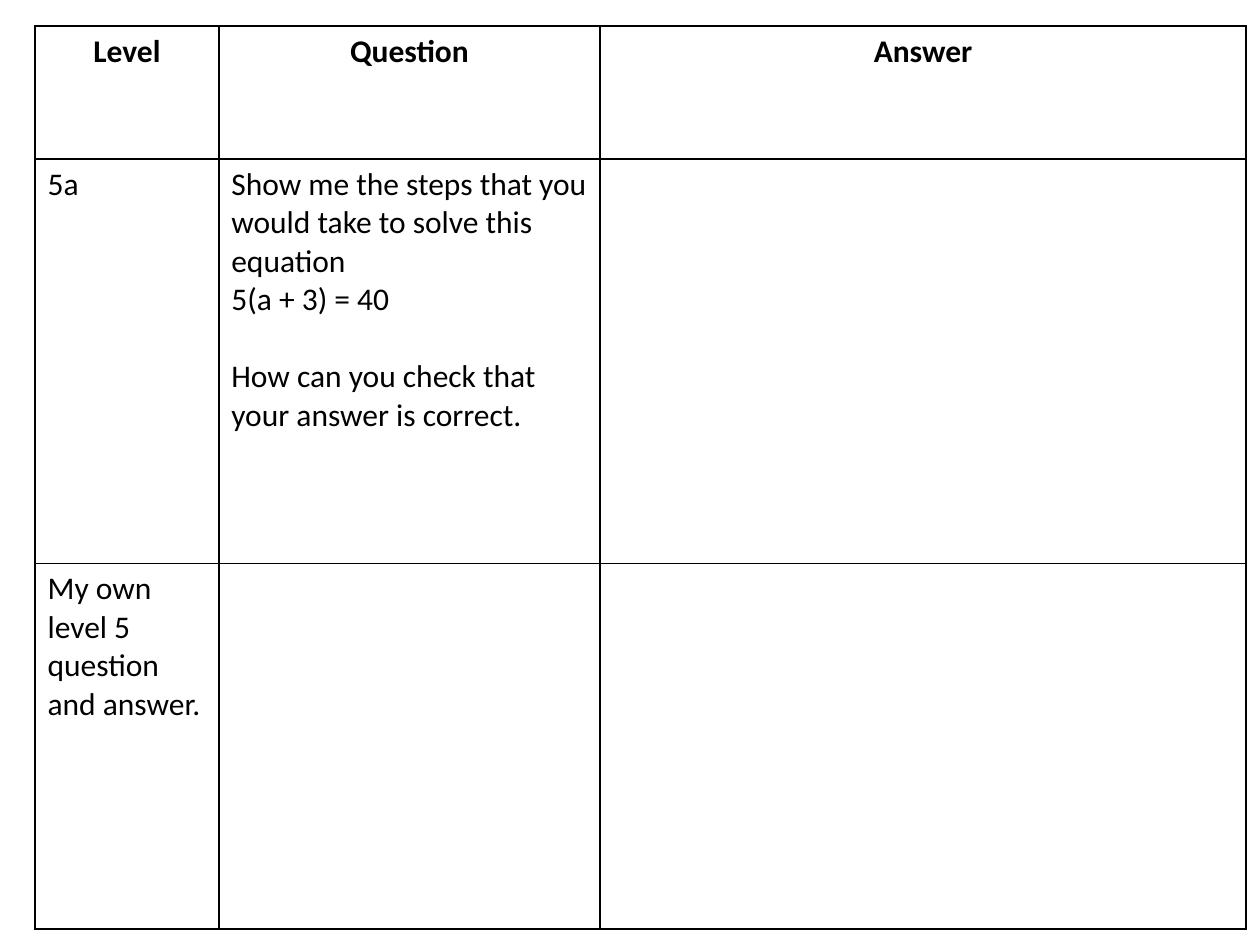
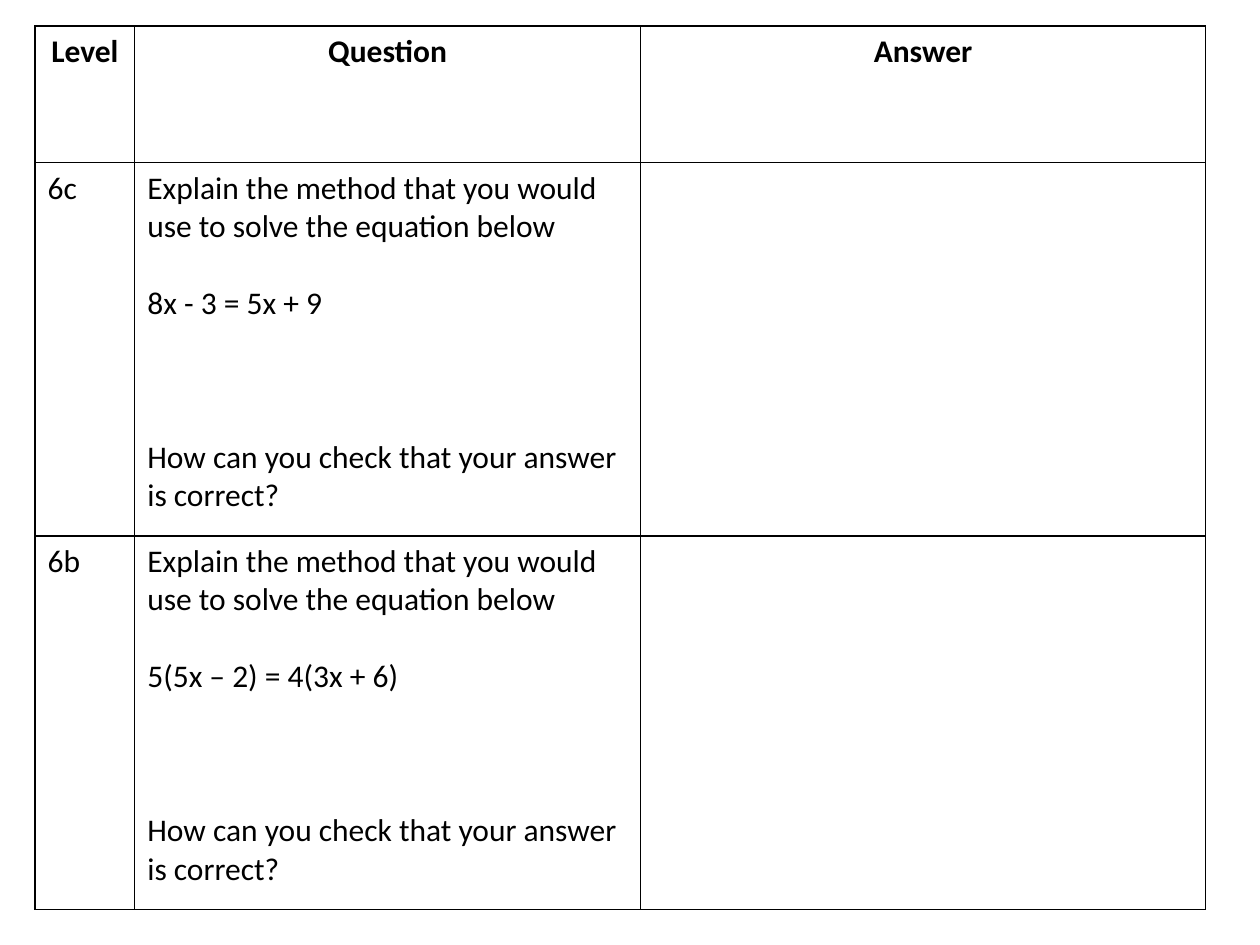
"""Build two question-and-answer worksheets on solving equations."""
from dataclasses import dataclass

from lxml import etree
from pptx import Presentation
from pptx.dml.color import RGBColor
from pptx.enum import text
from pptx.oxml import ns
from pptx.util import Pt

COLOURS = {"ink": "000000", "paper": "FFFFFF"}
FONT = "Calibri"
TEXT_SIZE = 18
LINE_HEIGHT = 22
BORDER_WIDTH = 1
LEFT, TOP = 20, 15
HEADINGS = ("Level", "Question", "Answer")


@dataclass(frozen=True)
class Line:
    """A paragraph and the number of text lines left free above it."""
    wording: str
    gap: int = 0


@dataclass(frozen=True)
class Task:
    """A level and its question."""
    level: str
    question: tuple[Line, ...] = ()


@dataclass(frozen=True)
class Worksheet:
    """Column widths, row heights and tasks of one slide."""
    widths: tuple[float, ...]
    heights: tuple[float, ...]
    tasks: tuple[Task, ...]


def method_question(equation: str) -> tuple[Line, ...]:
    """Return the level 6 question about an equation."""
    return (
        Line("Explain the method that you would use to solve the equation below"),
        Line(equation, gap=1),
        Line("How can you check that your answer is correct?", gap=3),
    )


WORKSHEETS = (
    Worksheet((105, 218, 369), (76, 231, 209), (
        Task("5a", (
            Line("Show me the steps that you would take to solve this equation"),
            Line("5(a + 3) = 40"),
            Line("How can you check that your answer is correct.", gap=1),
        )),
        Task("My own level 5 question and answer."),
    )),
    Worksheet((57, 289, 323), (78, 213.4, 213.4), (
        Task("6c", method_question("8x - 3 = 5x + 9")),
        Task("6b", method_question("5(5x – 2) = 4(3x + 6)")),
    )),
)


def write(paragraph, wording: str, *, bold: bool = False, centred: bool = False,
          gap: int = 0) -> None:
    """Put formatted text into a paragraph."""
    paragraph.alignment = text.PP_ALIGN.CENTER if centred else text.PP_ALIGN.LEFT
    paragraph.space_before = Pt(gap * LINE_HEIGHT)
    run = paragraph.add_run()
    run.text = wording
    run.font.name = FONT
    run.font.size = Pt(TEXT_SIZE)
    run.font.bold = bold
    run.font.color.rgb = RGBColor.from_string(COLOURS["ink"])


def style_cell(cell) -> None:
    """Give a cell a plain fill and a thin border on every side."""
    cell.fill.solid()
    cell.fill.fore_color.rgb = RGBColor.from_string(COLOURS["paper"])
    properties = cell._tc.get_or_add_tcPr()
    for position, side in enumerate(("lnL", "lnR", "lnT", "lnB")):
        border = etree.Element(ns.qn(f"a:{side}"), w=str(Pt(BORDER_WIDTH)))
        ink = etree.SubElement(border, ns.qn("a:solidFill"))
        etree.SubElement(ink, ns.qn("a:srgbClr"), val=COLOURS["ink"])
        properties.insert(position, border)


def fill_cell(cell, lines: tuple[Line, ...], heading: bool) -> None:
    """Write the lines of a cell one paragraph each."""
    style_cell(cell)
    for index, line in enumerate(lines):
        frame = cell.text_frame
        paragraph = frame.add_paragraph() if index else frame.paragraphs[0]
        write(paragraph, line.wording, bold=heading, centred=heading, gap=line.gap)


def draw_worksheet(slide, worksheet: Worksheet) -> None:
    """Draw the table of one worksheet."""
    rows = [[(Line(heading),) for heading in HEADINGS]]
    rows += [[(Line(task.level),), task.question, ()] for task in worksheet.tasks]
    grid = slide.shapes.add_table(
        len(rows), len(HEADINGS), Pt(LEFT), Pt(TOP),
        Pt(sum(worksheet.widths)), Pt(sum(worksheet.heights))).table
    grid.first_row = grid.horz_banding = False
    for column, width in zip(grid.columns, worksheet.widths):
        column.width = Pt(width)
    for row, height in zip(grid.rows, worksheet.heights):
        row.height = Pt(height)
    for row_index, row in enumerate(rows):
        for column_index, lines in enumerate(row):
            fill_cell(grid.cell(row_index, column_index), lines, row_index == 0)


def main() -> None:
    """Build and save the slides."""
    deck = Presentation()
    deck.slide_width, deck.slide_height = Pt(720), Pt(540)
    for worksheet in WORKSHEETS:
        draw_worksheet(deck.slides.add_slide(deck.slide_layouts[6]), worksheet)
    deck.save("out.pptx")


if __name__ == "__main__":
    main()
